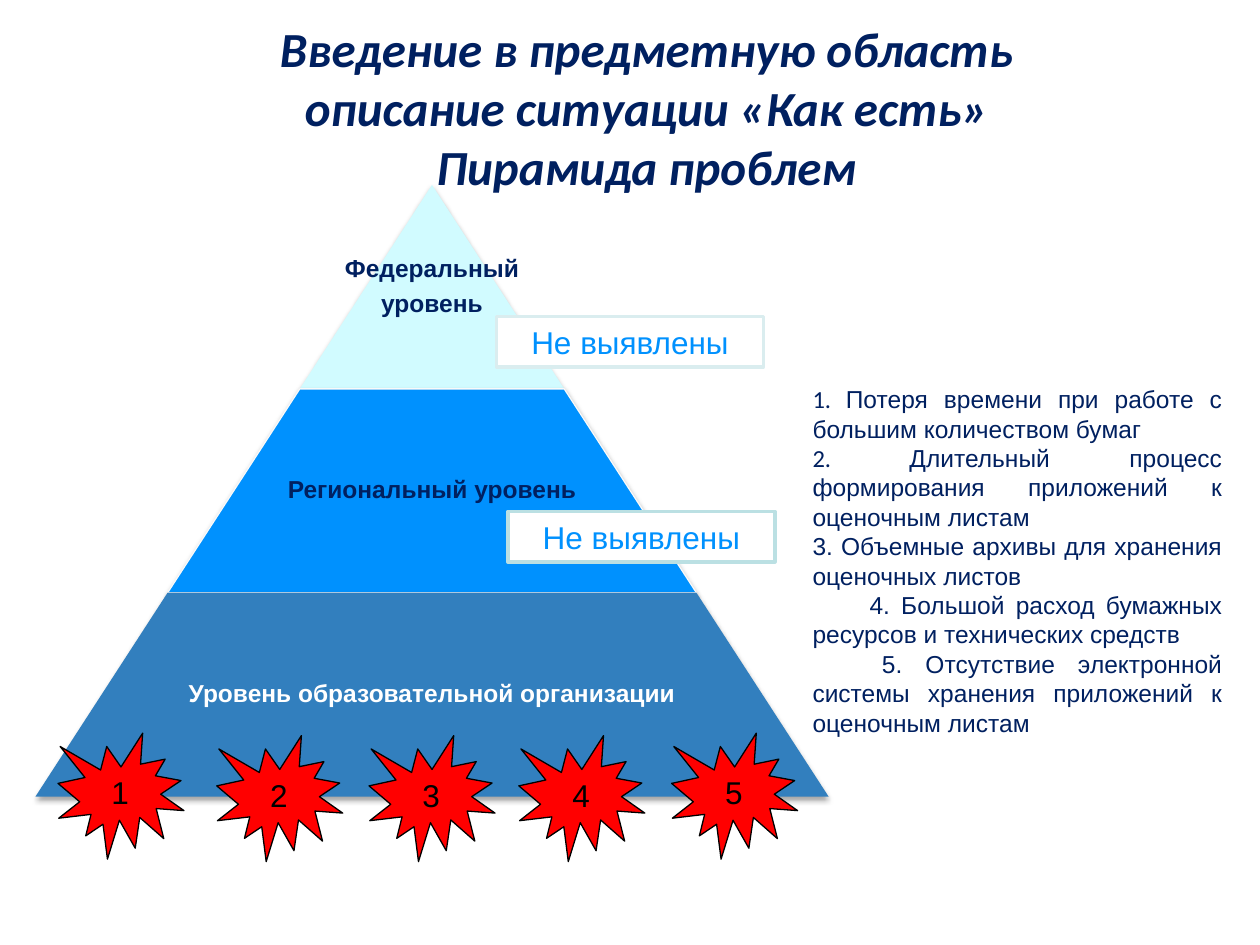
from lxml import etree
from pptx import Presentation
from pptx.dml.color import RGBColor
from pptx.enum.shapes import MSO_SHAPE
from pptx.enum.text import MSO_ANCHOR, MSO_AUTO_SIZE, PP_ALIGN
from pptx.oxml.ns import qn
from pptx.util import Cm, Pt

TRAPEZOID = MSO_SHAPE.TRAPEZOID
RECTANGLE = MSO_SHAPE.RECTANGLE
SEAL = MSO_SHAPE.EXPLOSION1
CENTER, JUSTIFY = PP_ALIGN.CENTER, PP_ALIGN.JUSTIFY
TOP, MIDDLE = MSO_ANCHOR.TOP, MSO_ANCHOR.MIDDLE
NO_AUTOFIT = MSO_AUTO_SIZE.NONE
NAVY, BLUE, WHITE, BLACK = "002060", "0091FE", "FFFFFF", "000000"


def rgb(value):
    return RGBColor.from_string(value)


def add_shape(shapes, kind, box, fill, line=None, width=0.75, text="", color=BLACK):
    """Add a filled preset shape with 18 pt centred text; box is in cm."""
    sp = shapes.add_shape(kind, *(Cm(v) for v in box))
    sp.shadow.inherit = False
    sp.fill.solid()
    sp.fill.fore_color.rgb = rgb(fill)
    if line:
        sp.line.color.rgb = rgb(line)
        sp.line.width = Pt(width)
    else:
        sp.line.fill.background()
    if text:
        p = sp.text_frame.paragraphs[0]
        p.text = text
        p.alignment = CENTER
        p.font.name, p.font.size = "Arial", Pt(18)
        p.font.color.rgb = rgb(color)
    return sp


prs = Presentation()
prs.slide_width, prs.slide_height = Cm(25.4), Cm(19.05)
s = prs.slides.add_slide(prs.slide_layouts[5])

# Title
title = s.shapes.title
title.left, title.top, title.width, title.height = Cm(5.31), Cm(0.25), Cm(15.44), Cm(2.74)
tf = title.text_frame
tf.word_wrap = False
tf.auto_size = NO_AUTOFIT
tf.vertical_anchor = TOP
p = tf.paragraphs[0]
p.text = "Введение в предметную область\vописание ситуации «Как есть»\vПирамида проблем"
p.alignment = CENTER
p.font.name, p.font.size = "Calibri", Pt(28)
p.font.bold = p.font.italic = True
p.font.color.rgb = rgb(NAVY)

# Pyramid: each tier is one step wider than the tier above
tiers = [
    (["Федеральный", "уровень"], "D1FBFF", None, NAVY, 5.33),
    (["Региональный уровень"], BLUE, "F9F9F9", NAVY, 6.93),
    (["Уровень образовательной организации"], "327FBE", None, WHITE, 10.4),
]
APEX_X, APEX_Y, STEP, TIER_H = 8.71, 3.73, 5.33, 4.11
pyramid = s.shapes.add_group_shape()
for i, (lines, fill, line, color, label_w) in enumerate(tiers):
    w, y = STEP * (i + 1), APEX_Y + i * TIER_H
    sp = add_shape(pyramid.shapes, TRAPEZOID, (APEX_X - w / 2, y, w, TIER_H), fill, line)
    sp.adjustments[0] = STEP / 2 / TIER_H
    effects = sp.element.spPr.find(qn("a:effectLst"))
    shadow = etree.SubElement(effects, qn("a:outerShdw"), blurRad=str(Pt(3.1)),
                              dist=str(Pt(1.8)), dir="5400000", rotWithShape="0")
    tint = etree.SubElement(shadow, qn("a:srgbClr"), val=BLACK)
    etree.SubElement(tint, qn("a:alpha"), val="35000")

    label = pyramid.shapes.add_textbox(Cm(APEX_X - label_w / 2), Cm(y), Cm(label_w), Cm(TIER_H))
    tf = label.text_frame
    tf.word_wrap = True
    tf.vertical_anchor = MIDDLE
    tf.margin_left = tf.margin_right = tf.margin_top = tf.margin_bottom = Cm(0.05)
    for j, text in enumerate(lines):
        p = tf.add_paragraph() if j else tf.paragraphs[0]
        p.text = text
        p.alignment = CENTER
        p.line_spacing = 0.9
        p.space_after = Pt(5)
        p.font.name, p.font.size, p.font.bold = "Arial", Pt(14), True
        p.font.color.rgb = rgb(color)

# Notes on the two upper tiers
for x, y, line in [(10.01, 6.38, "DAEDEF"), (10.24, 10.31, "BBE0E3")]:
    add_shape(s.shapes, RECTANGLE, (x, y, 5.38, 1.02), WHITE, line, 2, "Не выявлены", BLUE)

# Numbered problem markers
markers = [(1.17, 14.78), (4.37, 14.83), (7.44, 14.83), (10.46, 14.83), (13.54, 14.78)]
for number, (x, y) in enumerate(markers, 1):
    add_shape(s.shapes, SEAL, (x, y, 2.54, 2.54), "FF0000", BLACK, text=str(number))

# Problem list: number, its font, text, first-line indent in cm
problems = [
    ("1. ", "Calibri", "Потеря времени при работе с большим количеством бумаг", 0),
    ("2. ", "Calibri", "Длительный процесс формирования приложений к оценочным листам", 0),
    ("3. ", "Arial", "Объемные архивы для хранения оценочных листов", 0),
    ("4. ", "Arial", "Большой расход бумажных ресурсов и технических средств", 1.15),
    ("5. ", "Arial", "Отсутствие электронной системы хранения приложений к оценочным листам", 1.4),
]
tf = s.shapes.add_textbox(Cm(16.13), Cm(7.62), Cm(8.76), Cm(8.64)).text_frame
tf.word_wrap = True
for i, (number, number_font, text, indent) in enumerate(problems):
    p = tf.add_paragraph() if i else tf.paragraphs[0]
    p.alignment = JUSTIFY
    if indent:
        p._p.get_or_add_pPr().set("indent", str(Cm(indent)))
    p.font.size = Pt(14)
    p.font.color.rgb = rgb(NAVY)
    for part, font in [(number, number_font), (text, "Arial")]:
        r = p.add_run()
        r.text = part
        r.font.name = font

prs.save("out.pptx")
